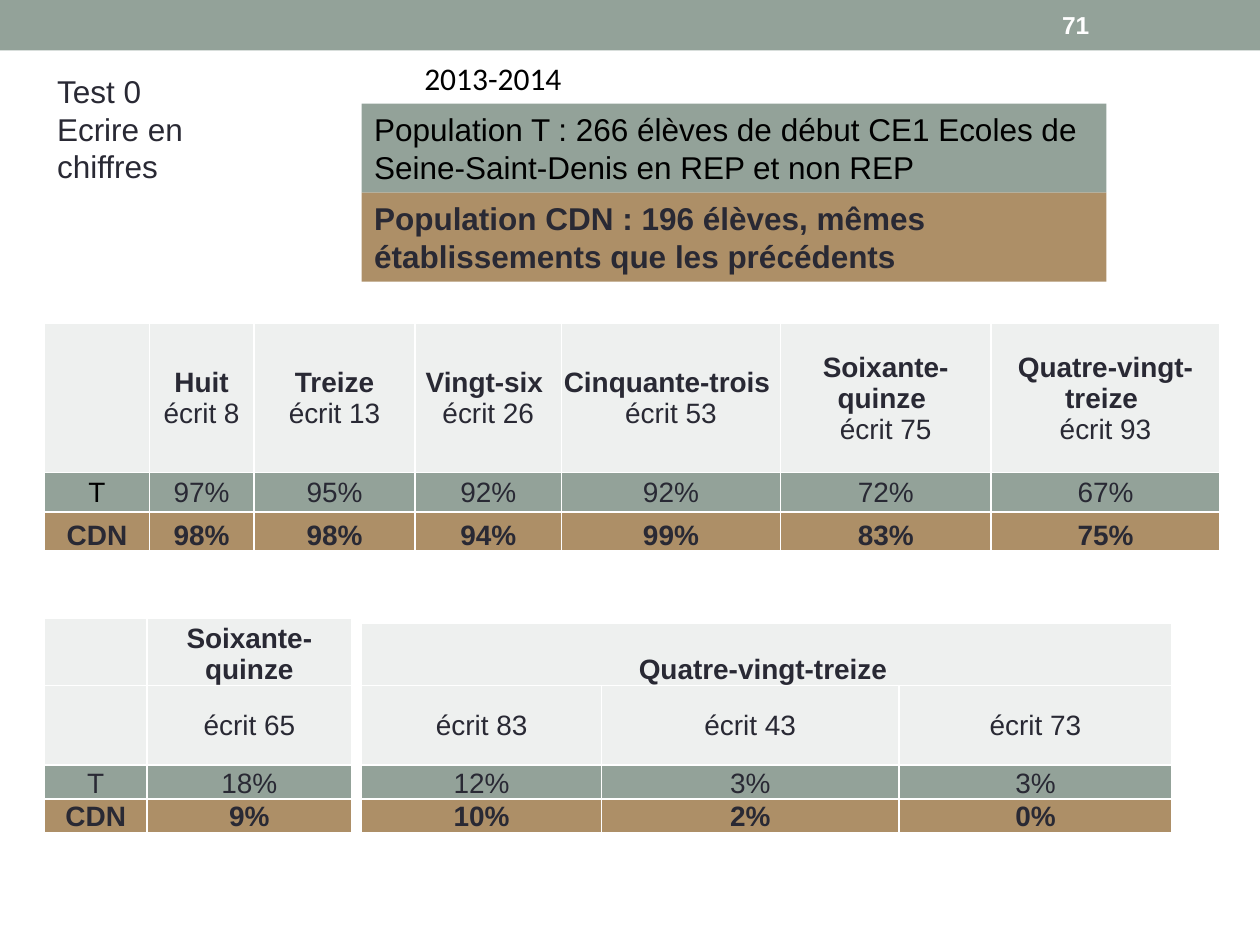
from lxml import etree
from pptx import Presentation
from pptx.dml.color import RGBColor
from pptx.enum.shapes import MSO_SHAPE
from pptx.enum.text import MSO_ANCHOR, MSO_AUTO_SIZE, PP_ALIGN
from pptx.oxml.ns import qn
from pptx.util import Pt

RECTANGLE = MSO_SHAPE.RECTANGLE
TOP, MIDDLE, BOTTOM = MSO_ANCHOR.TOP, MSO_ANCHOR.MIDDLE, MSO_ANCHOR.BOTTOM
LEFT, CENTER = PP_ALIGN.LEFT, PP_ALIGN.CENTER
NO_AUTOFIT = MSO_AUTO_SIZE.NONE
SAGE, TAN, PALE = "93A299", "AD8F67", "EEF0EF"
INK, BLACK, WHITE = "292934", "000000", "FFFFFF"
CELL_MARGINS = {"margin_left": 0.7, "margin_right": 0.7, "margin_top": 0.7, "margin_bottom": 0}

HEADER = {"fill": PALE, "anchor": MIDDLE, "bold": False}
NAME_HEADER = {"fill": PALE, "anchor": BOTTOM, "bold": True}
T_MIDDLE = {"fill": SAGE, "anchor": MIDDLE, "bold": False}
T_BOTTOM = {"fill": SAGE, "anchor": BOTTOM, "bold": False}
CDN = {"fill": TAN, "anchor": BOTTOM, "bold": True}

RESULTS = [
    (HEADER, ["", "Huit\nécrit 8", "Treize\nécrit 13", "Vingt-six \nécrit 26",
              "Cinquante-trois \nécrit 53", "Soixante-quinze \nécrit 75",
              "Quatre-vingt-treize \nécrit 93"]),
    (T_MIDDLE, ["T", "97%", "95%", "92%", "92%", "72%", "67%"]),
    (CDN, ["CDN", "98%", "98%", "94%", "99%", "83%", "75%"]),
]
ERRORS_75 = [
    (NAME_HEADER, ["", "Soixante-quinze"]),
    (HEADER, ["", "écrit 65"]),
    (T_BOTTOM, ["T", "18%"]),
    (CDN, ["CDN", "9%"]),
]
ERRORS_93 = [
    (NAME_HEADER, ["Quatre-vingt-treize ", "", ""]),
    (HEADER, ["écrit 83", "écrit 43", "écrit 73"]),
    (T_BOTTOM, ["12%", "3%", "3%"]),
    (CDN, ["10%", "2%", "0%"]),
]


def color(hex_value):
    return RGBColor.from_string(hex_value)


def set_values(target, values):
    for name, value in values.items():
        setattr(target, name, value)


def write_para(para, text, size, ink=INK, bold=False, font="Arial", align=LEFT):
    para.alignment = align
    span = para.add_run()
    span.text = text
    set_values(span.font, {"name": font, "size": Pt(size), "bold": bold})
    span.font.color.rgb = color(ink)


def write_lines(frame, lines, anchor=TOP, wrap=True, **style):
    set_values(frame, {"word_wrap": wrap, "auto_size": NO_AUTOFIT, "vertical_anchor": anchor})
    for index, line in enumerate(lines):
        para = frame.add_paragraph() if index else frame.paragraphs[0]
        write_para(para, line, **style)


def add_title(page, lines, left, top, width, height):
    title = page.shapes.title
    set_values(title, {"left": Pt(left), "top": Pt(top), "width": Pt(width), "height": Pt(height)})
    write_lines(title.text_frame, lines, size=18)


def add_label(page, text, left, top, width, height, **style):
    box = page.shapes.add_textbox(Pt(left), Pt(top), Pt(width), Pt(height))
    write_lines(box.text_frame, [text], **style)


def add_band(page, left, top, width, height, fill, text=None, **style):
    box = page.shapes.add_shape(RECTANGLE, Pt(left), Pt(top), Pt(width), Pt(height))
    box.shadow.inherit = False
    box.fill.solid()
    box.fill.fore_color.rgb = color(fill)
    box.line.fill.background()
    if text:
        write_lines(box.text_frame, [text], size=18, **style)


def add_borders(cell):
    properties = cell._tc.get_or_add_tcPr()
    for side in ("a:lnL", "a:lnR", "a:lnT", "a:lnB"):
        line = etree.SubElement(properties, qn(side), w=str(Pt(1)))
        fill = etree.SubElement(line, qn("a:solidFill"))
        etree.SubElement(fill, qn("a:srgbClr"), val=WHITE)


def fill_cell(cell, text, row_style, ink):
    add_borders(cell)
    cell.fill.solid()
    cell.fill.fore_color.rgb = color(row_style["fill"])
    cell.vertical_anchor = row_style["anchor"]
    set_values(cell, {name: Pt(value) for name, value in CELL_MARGINS.items()})
    if not text:
        return
    lines = text.split("\n")
    for index, line in enumerate(lines):
        para = cell.text_frame.add_paragraph() if index else cell.text_frame.paragraphs[0]
        bold = row_style["bold"] or index < len(lines) - 1
        write_para(para, line, 16, ink, bold, align=CENTER)


def add_score_table(page, left, top, widths, heights, rows, label_ink=INK):
    frame = page.shapes.add_table(len(heights), len(widths), Pt(left), Pt(top),
                                  Pt(sum(widths)), Pt(sum(heights)))
    table = frame.table
    set_values(table, {"first_row": False, "horz_banding": False})
    for column, width in zip(table.columns, widths):
        column.width = Pt(width)
    for row, height in zip(table.rows, heights):
        row.height = Pt(height)
    for row_index, (row_style, texts) in enumerate(rows):
        for column_index, text in enumerate(texts):
            ink = label_ink if text == "T" else INK
            fill_cell(table.cell(row_index, column_index), text, row_style, ink)
    return table


def main():
    deck = Presentation()
    deck.slide_width, deck.slide_height = Pt(720), Pt(540)
    page = deck.slides.add_slide(deck.slide_layouts[5])

    add_band(page, 0, 0, 720, 28.8, SAGE)
    add_title(page, ["Test 0", "Ecrire en chiffres"], 25.4, 37.4, 113, 72.7)
    add_score_table(page, 25.5, 185, [59.8, 59.8, 92.2, 83.5, 125.3, 120.2, 131],
                    [85, 22.5, 22.5], RESULTS, label_ink=BLACK)
    add_band(page, 206.7, 59.2, 425.5, 50.9, SAGE,
             "Population T : 266 élèves de début CE1 Ecoles de Seine-Saint-Denis en REP et non REP",
             ink=BLACK)
    add_score_table(page, 25.5, 353.4, [58.4, 117.2], [38.2, 45.6, 19.4, 19.4], ERRORS_75)
    errors = add_score_table(page, 206.7, 356.2, [137, 170, 156],
                             [35.4, 45.6, 19.4, 19.4], ERRORS_93)
    errors.cell(0, 0).merge(errors.cell(0, 2))
    add_label(page, "2013-2014", 235.4, 30.2, 93.6, 28.8,
              size=18, ink=BLACK, font="Calibri", wrap=False)
    add_band(page, 206.7, 110.1, 425.5, 50.9, TAN,
             "Population CDN : 196 élèves, mêmes établissements que les précédents", bold=True)
    add_label(page, "71", 599.8, 1.4, 84.2, 25.9, size=14, ink=WHITE, bold=True, anchor=MIDDLE)

    deck.save("out.pptx")


if __name__ == "__main__":
    main()
